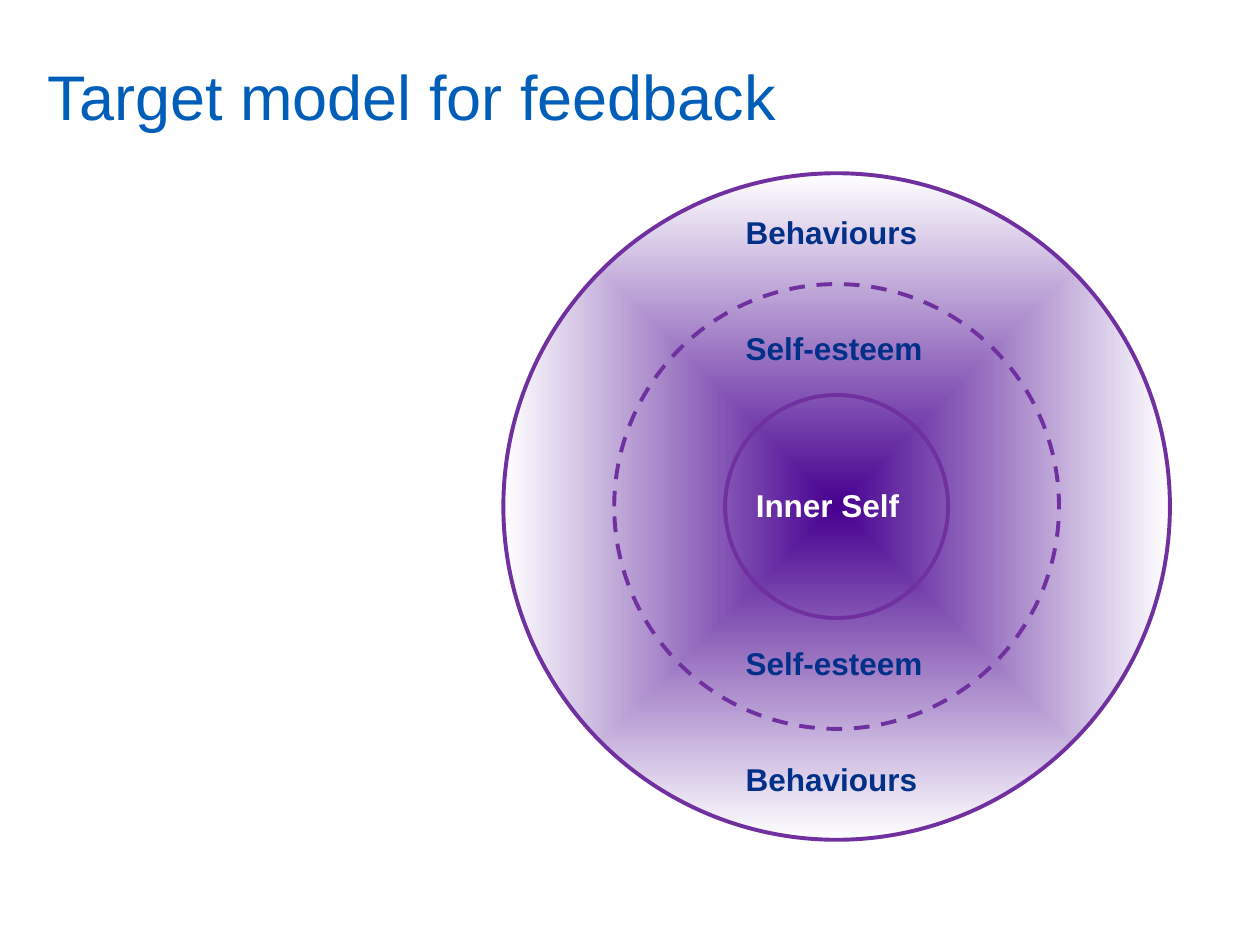
"""Build the target model slide: three concentric rings with labels."""
from dataclasses import dataclass

from lxml.etree import SubElement
from pptx import Presentation
from pptx.dml.color import RGBColor
from pptx.enum.dml import MSO_LINE
from pptx.enum.shapes import MSO_SHAPE
from pptx.enum.text import MSO_ANCHOR, MSO_AUTO_SIZE, PP_ALIGN
from pptx.oxml.ns import qn
from pptx.shapes.autoshape import Shape
from pptx.slide import Slide
from pptx.text.text import TextFrame
from pptx.util import Inches, Pt


@dataclass(frozen=True)
class Theme:
    font: str = "Arial"
    title_size: float = 36
    label_size: float = 18
    line_width: float = 2.25
    title: str = "005EB8"
    label: str = "003087"
    ring: str = "7030A0"
    core: str = "46008F"
    white: str = "FFFFFF"


@dataclass(frozen=True)
class Ring:
    diameter: float
    dashed: bool = False
    shaded: bool = False


@dataclass(frozen=True)
class Label:
    text: str
    top: float
    left: float = 5.82
    color: str = Theme.label


THEME = Theme()
CENTER_X, CENTER_Y = 6.64, 4.02
LABEL_WIDTH, LABEL_HEIGHT = 2.25, 0.4
RINGS = [Ring(5.29, shaded=True), Ring(3.53, dashed=True), Ring(1.77)]
LABELS = [
    Label("Behaviours", 1.64),
    Label("Self-esteem", 2.56),
    Label("Inner Self", 3.81, left=5.9, color=THEME.white),
    Label("Self-esteem", 5.06),
    Label("Behaviours", 5.98),
]


def write_text(frame: TextFrame, text: str, *, size: float, color: str,
               bold: bool = False, anchor: MSO_ANCHOR = MSO_ANCHOR.TOP) -> None:
    """Write one left-aligned, formatted paragraph into a text frame."""
    frame.word_wrap = True
    frame.vertical_anchor = anchor
    para = frame.paragraphs[0]
    para.alignment = PP_ALIGN.LEFT
    span = para.add_run()
    span.text = text
    span.font.name = THEME.font
    span.font.size = Pt(size)
    span.font.bold = bold
    span.font.color.rgb = RGBColor.from_string(color)


def shade_from_center(shape: Shape) -> None:
    """Fill a shape with a gradient that spreads from its center."""
    shape.fill.gradient()
    for stop, color in zip(shape.fill.gradient_stops, (THEME.core, THEME.white)):
        stop.color.rgb = RGBColor.from_string(color)
    gradient = shape.element.spPr.find(qn("a:gradFill"))
    gradient.remove(gradient.find(qn("a:lin")))
    spread = SubElement(gradient, qn("a:path"), {"path": "shape"})
    SubElement(spread, qn("a:fillToRect"), dict.fromkeys("ltrb", "50000"))


def draw_ring(page: Slide, ring: Ring) -> None:
    """Draw one circle around the common center."""
    radius = ring.diameter / 2
    circle = page.shapes.add_shape(
        MSO_SHAPE.OVAL, Inches(CENTER_X - radius), Inches(CENTER_Y - radius),
        Inches(ring.diameter), Inches(ring.diameter))
    circle.shadow.inherit = False
    if ring.shaded:
        shade_from_center(circle)
    else:
        circle.fill.background()
    circle.line.color.rgb = RGBColor.from_string(THEME.ring)
    circle.line.width = Pt(THEME.line_width)
    if ring.dashed:
        circle.line.dash_style = MSO_LINE.DASH


def draw_label(page: Slide, label: Label) -> None:
    """Draw one bold ring label."""
    box = page.shapes.add_textbox(Inches(label.left), Inches(label.top),
                                  Inches(LABEL_WIDTH), Inches(LABEL_HEIGHT))
    write_text(box.text_frame, label.text, size=THEME.label_size,
               color=label.color, bold=True)
    box.text_frame.auto_size = MSO_AUTO_SIZE.SHAPE_TO_FIT_TEXT


def draw_title(page: Slide, text: str) -> None:
    """Place and fill the title placeholder."""
    title = page.shapes.title
    title.left, title.top = Inches(0.28), Inches(0.29)
    title.width, title.height = Inches(9.07), Inches(0.94)
    write_text(title.text_frame, text, size=THEME.title_size,
               color=THEME.title, anchor=MSO_ANCHOR.MIDDLE)


def main() -> None:
    """Build and save the deck."""
    deck = Presentation()
    deck.slide_width, deck.slide_height = Inches(10), Inches(7.5)
    page = deck.slides.add_slide(deck.slide_layouts.get_by_name("Title Only"))
    draw_title(page, "Target model for feedback")
    for ring in RINGS:
        draw_ring(page, ring)
    for label in LABELS:
        draw_label(page, label)
    deck.save("out.pptx")


if __name__ == "__main__":
    main()
